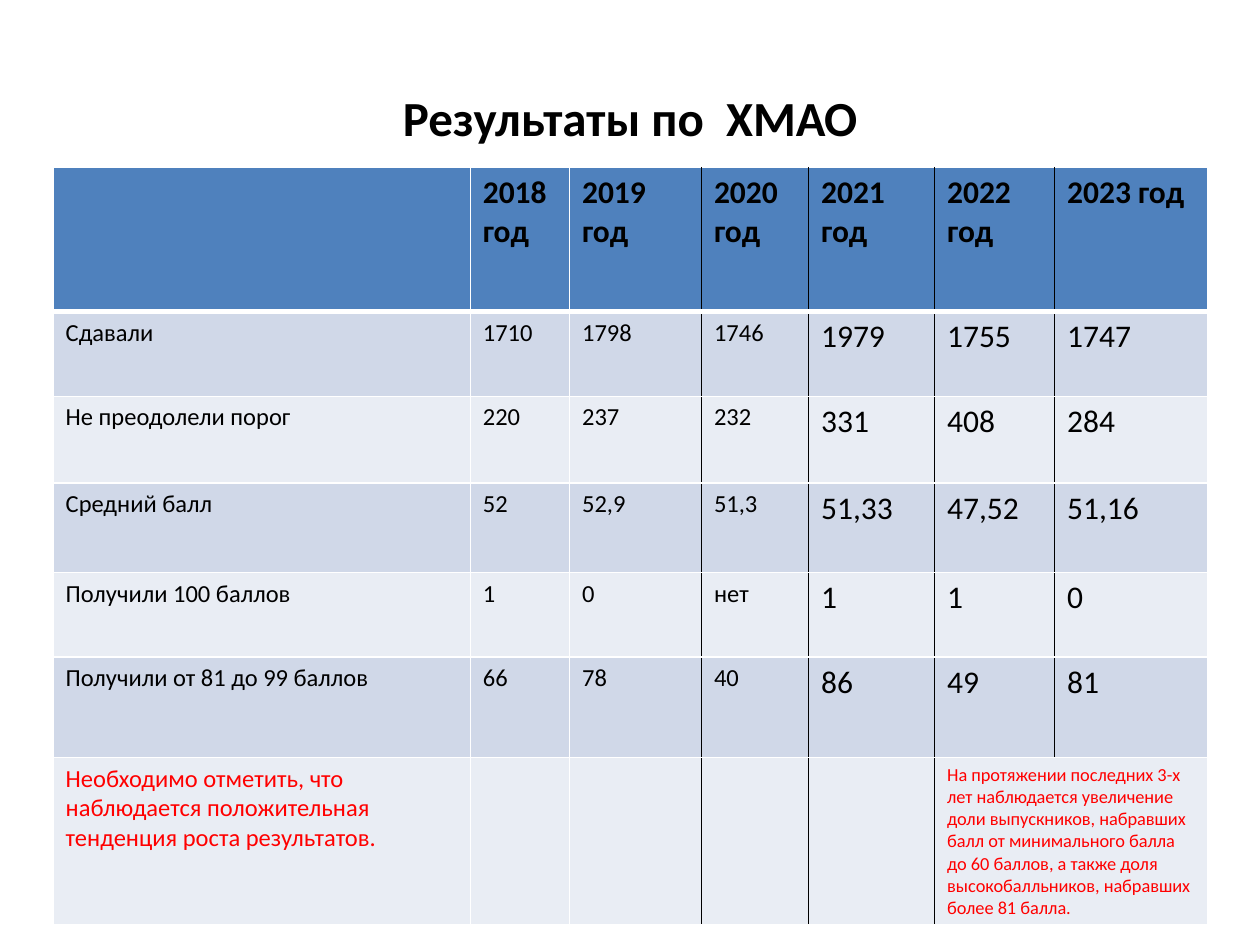
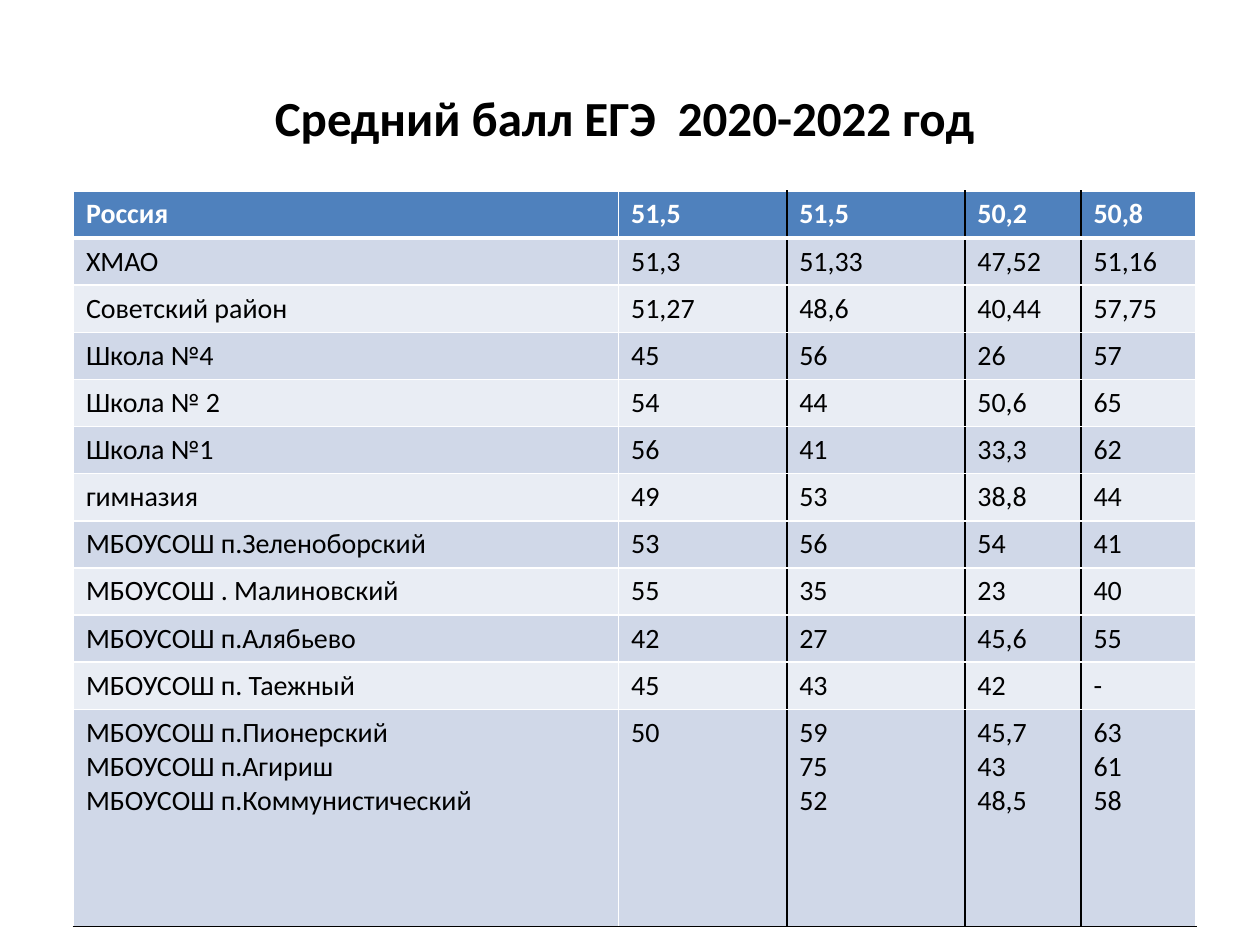
"""Build two slides of exam results, each a title above a banded table."""
from dataclasses import dataclass

from lxml.etree import SubElement
from pptx import Presentation
from pptx.dml.color import RGBColor as Rgb
from pptx.enum.text import MSO_ANCHOR as Anchor, PP_ALIGN as Align
from pptx.oxml.ns import qn
from pptx.util import Cm, Pt


@dataclass(frozen=True)
class Theme:
    font: str = "Calibri"
    black: str = "000000"
    white: str = "FFFFFF"
    accent: str = "FF0000"
    header: str = "4F81BD"
    bands: tuple = ("D0D8E8", "E9EDF4")
    title_size: float = 28
    large: float = 18
    medium: float = 16
    small: float = 14
    note: float = 10.5
    rule: float = 1
    header_rule: float = 3


THEME = Theme()
SLIDE_SIZE = (25.4, 19.05)
TITLE_BOX = (1.27, 0.76, 22.86, 3.18)

REGION = {
    "title": "Результаты по  ХМАО",
    "origin": (1.07, 3.38),
    "widths": [8.41, 2, 2.66, 2.16, 2.54, 2.42, 3.08],
    "heights": [2.9, 1.71, 1.75, 1.8, 1.7, 2.03, 3.38],
    "header_color": THEME.black,
    "header_size": THEME.large,
    "column_sizes": [THEME.small] * 4 + [THEME.large] * 3,
    "first_dark_column": 3,
    "bottom_color": THEME.white,
    "merged": [((6, 5), (6, 6))],
    "remarks": {(6, 0): THEME.small, (6, 5): THEME.note},
    "rows": [
        ["", "2018 год", "2019 год", "2020 год", "2021 год", "2022 год", "2023 год"],
        ["Сдавали", "1710", "1798", "1746", "1979", "1755", "1747"],
        ["Не преодолели порог", "220", "237", "232", "331", "408", "284"],
        ["Средний балл", "52", "52,9", "51,3", "51,33", "47,52", "51,16"],
        ["Получили 100 баллов", "1", "0", "нет", "1", "1", "0"],
        ["Получили от 81 до 99 баллов", "66", "78", "40", "86", "49", "81"],
        ["Необходимо отметить, что наблюдается положительная тенденция роста результатов.",
         "", "", "", "",
         "На протяжении последних 3-х лет наблюдается увеличение доли выпускников, "
         "набравших балл от минимального балла до 60 баллов, а также доля "
         "высокобалльников, набравших более 81 балла.", ""],
    ],
}

SCHOOLS = {
    "title": "Средний балл ЕГЭ  2020-2022 год ",
    "origin": (1.48, 3.85),
    "widths": [10.99, 3.39, 3.59, 2.34, 2.32],
    "heights": [0.95] * 11 + [4.38],
    "header_color": THEME.white,
    "header_size": THEME.medium,
    "column_sizes": [THEME.medium] * 5,
    "first_dark_column": 2,
    "bottom_color": THEME.black,
    "merged": [],
    "remarks": {},
    "rows": [
        ["Россия", "51,5", "51,5", "50,2", "50,8"],
        ["ХМАО", "51,3", "51,33", "47,52", "51,16"],
        ["Советский район", "51,27", "48,6", "40,44", "57,75"],
        ["Школа №4", "45", "56", "26", "57"],
        ["Школа № 2", "54", "44", "50,6", "65"],
        ["Школа №1", "56", "41", "33,3", "62"],
        ["гимназия", "49", "53", "38,8", "44"],
        ["МБОУСОШ п.Зеленоборский", "53", "56", "54", "41"],
        ["МБОУСОШ . Малиновский", "55", "35", "23", "40"],
        ["МБОУСОШ п.Алябьево", "42", "27", "45,6", "55"],
        ["МБОУСОШ п. Таежный", "45", "43", "42", "-"],
        ["МБОУСОШ п.Пионерский\nМБОУСОШ п.Агириш\nМБОУСОШ п.Коммунистический",
         "50", "59\n75\n52", "45,7\n43\n48,5", "63\n61\n58"],
    ],
}


def write(frame, text, size, color, bold=False, align=Align.LEFT):
    for index, line in enumerate(text.split("\n")):
        paragraph = frame.add_paragraph() if index else frame.paragraphs[0]
        paragraph.alignment = align
        if line:
            run = paragraph.add_run()
            run.text = line
            run.font.name = THEME.font
            run.font.size = Pt(size)
            run.font.bold = bold
            run.font.color.rgb = Rgb.from_string(color)


def add_title(slide, text):
    frame = slide.shapes.add_textbox(*map(Cm, TITLE_BOX)).text_frame
    frame.word_wrap = True
    frame.vertical_anchor = Anchor.MIDDLE
    write(frame, text, THEME.title_size, THEME.black, True, Align.CENTER)


def set_borders(cell, borders):
    properties = cell._tc.get_or_add_tcPr()
    for position, (side, (color, width)) in enumerate(borders.items()):
        edge = SubElement(properties, qn(f"a:ln{side}"), w=str(Pt(width)))
        fill = SubElement(edge, qn("a:solidFill"))
        SubElement(fill, qn("a:srgbClr"), val=color)
        properties.insert(position, edge)


def cell_borders(content, row, column, span):
    def vertical(boundary):
        dark = content["first_dark_column"] <= boundary < len(content["widths"])
        return (THEME.black if dark else THEME.white, THEME.rule)

    def horizontal(boundary):
        last = boundary == len(content["rows"])
        return (content["bottom_color"] if last else THEME.white,
                THEME.header_rule if boundary == 1 else THEME.rule)

    return {"L": vertical(column), "R": vertical(column + span),
            "T": horizontal(row), "B": horizontal(row + 1)}


def text_style(content, row, column):
    if row == 0:
        return content["header_size"], content["header_color"], True
    if (row, column) in content["remarks"]:
        return content["remarks"][row, column], THEME.accent, False
    return content["column_sizes"][column], THEME.black, False


def add_results(slide, content):
    rows, widths, heights = content["rows"], content["widths"], content["heights"]
    box = (*content["origin"], sum(widths), sum(heights))
    results = slide.shapes.add_table(len(rows), len(widths), *map(Cm, box)).table
    results.horz_banding = False
    for column, width in zip(results.columns, widths):
        column.width = Cm(width)
    for row, height in zip(results.rows, heights):
        row.height = Cm(height)
    for first, last in content["merged"]:
        results.cell(*first).merge(results.cell(*last))

    for row, texts in enumerate(rows):
        for column, text in enumerate(texts):
            cell = results.cell(row, column)
            cell.fill.solid()
            shade = THEME.bands[(row - 1) % 2] if row else THEME.header
            cell.fill.fore_color.rgb = Rgb.from_string(shade)
            if cell.is_spanned:
                continue
            span = cell.span_width if cell.is_merge_origin else 1
            set_borders(cell, cell_borders(content, row, column, span))
            write(cell.text_frame, text, *text_style(content, row, column))


def main():
    deck = Presentation()
    deck.slide_width, deck.slide_height = map(Cm, SLIDE_SIZE)
    for content in (REGION, SCHOOLS):
        slide = deck.slides.add_slide(deck.slide_layouts[6])
        add_title(slide, content["title"])
        add_results(slide, content)
    deck.save("out.pptx")


if __name__ == "__main__":
    main()
